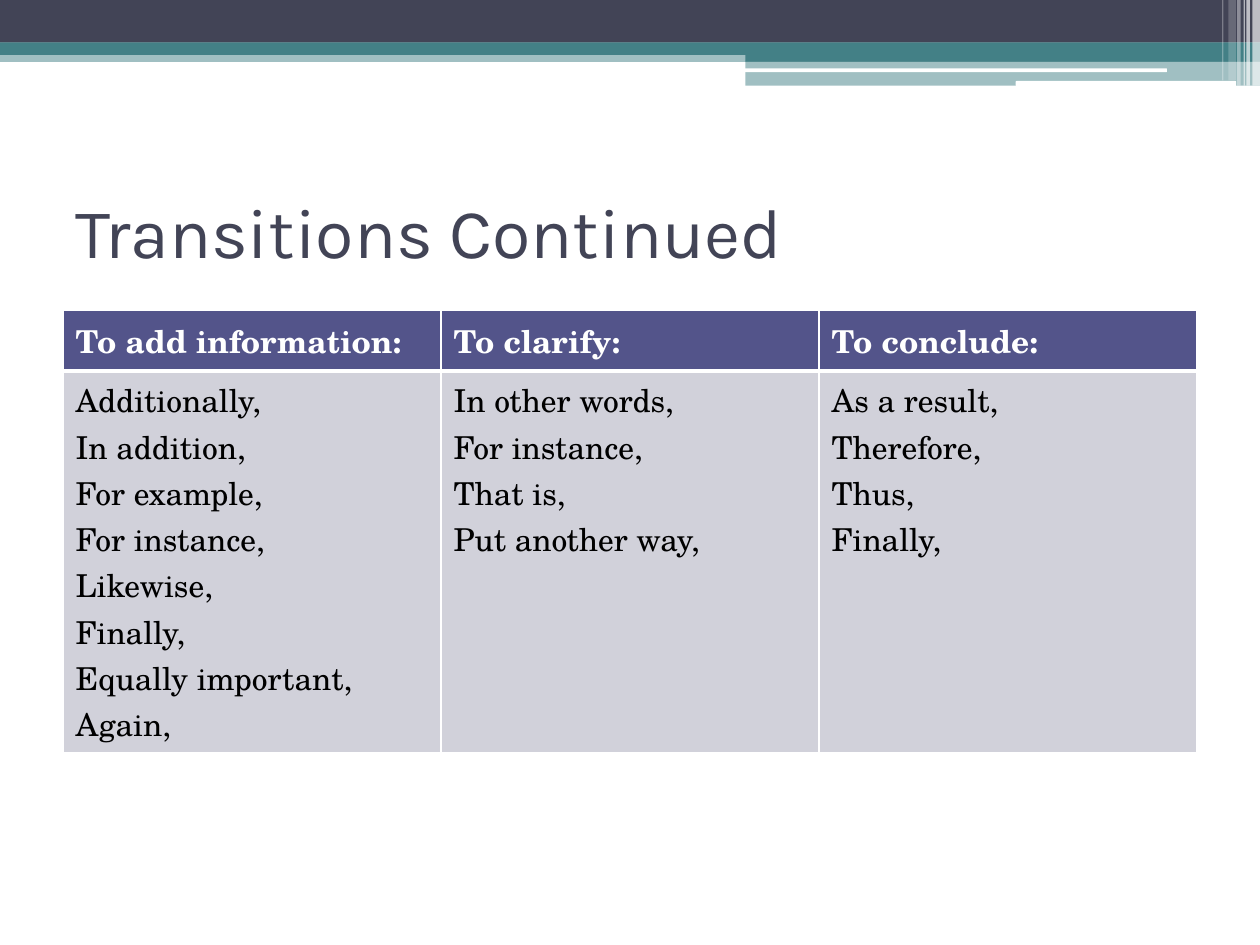
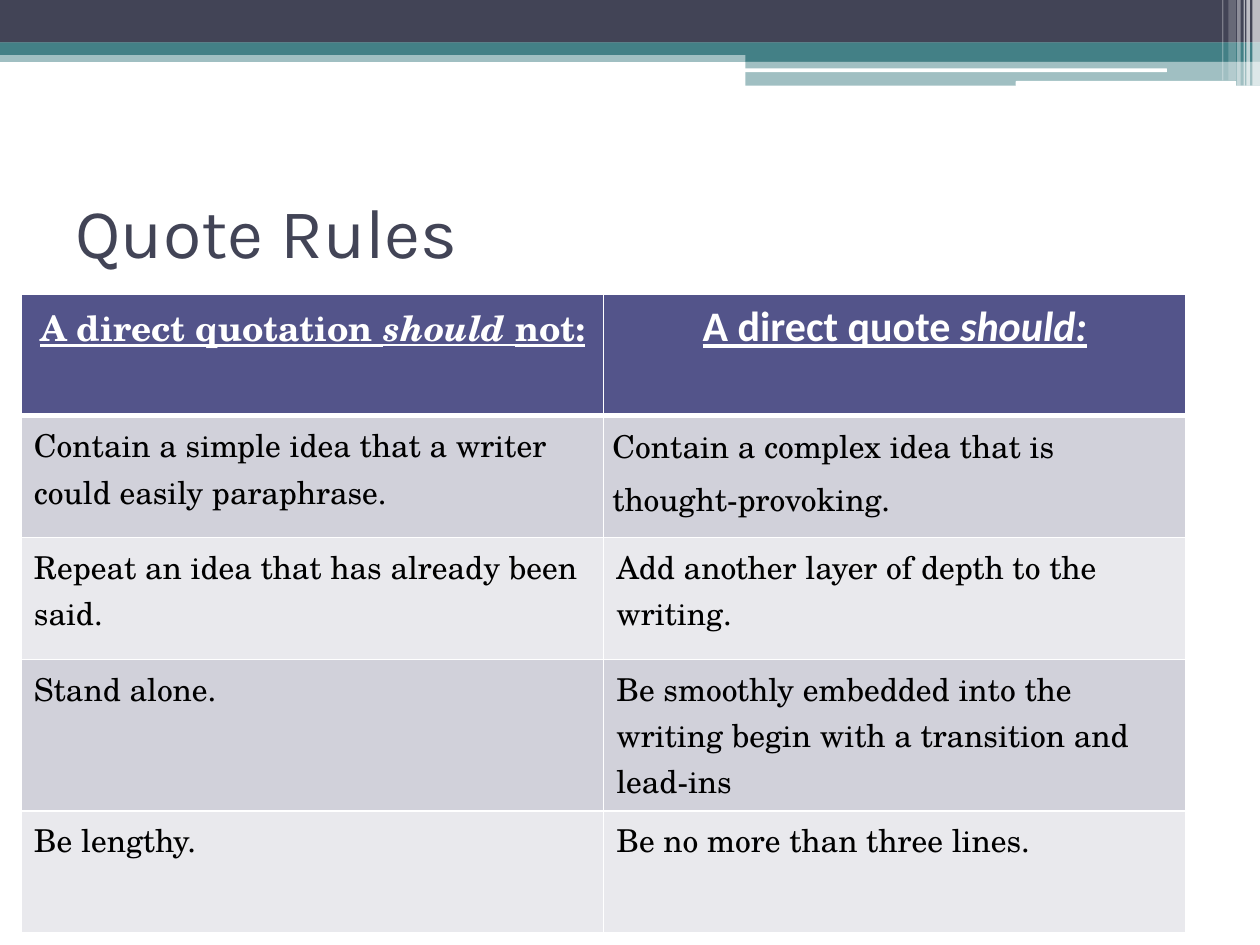
from lxml.etree import SubElement as Sub
from pptx import Presentation
from pptx.dml.color import RGBColor as Rgb
from pptx.enum.shapes import MSO_SHAPE as Form
from pptx.enum.text import MSO_ANCHOR as Anchor, PP_ALIGN as Align
from pptx.oxml.ns import qn
from pptx.util import Pt


class Theme:
    dark = "424456"
    teal = "438086"
    white = "FFFFFF"
    black = "000000"
    head = "53548A"
    bands = ("D1D1DA", "E9E9ED")
    title = ("Karla", 40)
    body = ("TeX Gyre Schola", 18)
    rule = ("TeX Gyre Schola", 20)
    quote = ("Calibri", 24)


def write(para, text, font, color, **flags):
    run = para.add_run()
    run.text = text
    run.font.name, size = font
    run.font.size = Pt(size)
    run.font.color.rgb = Rgb.from_string(color)
    for name, value in flags.items():
        setattr(run.font, name, value)


def grid(slide, left, top, wide, highs, cols):
    frame = slide.shapes.add_table(
        len(highs), cols, Pt(left), Pt(top), Pt(wide), Pt(sum(highs)))
    table = frame.table
    for r, high in enumerate(highs):
        table.rows[r].height = Pt(high)
        for cell in table.rows[r].cells:
            # White borders, with a heavy rule under the header
            props = cell._tc.get_or_add_tcPr()
            for side in "LRTB":
                heavy = (r, side) in ((0, "B"), (1, "T"))
                line = Sub(props, qn("a:ln" + side), w=str(Pt(3 if heavy else 1)))
                Sub(Sub(line, qn("a:solidFill")), qn("a:srgbClr"), val=Theme.white)
            cell.fill.solid()
            shade = Theme.bands[(r - 1) % 2] if r else Theme.head
            cell.fill.fore_color.rgb = Rgb.from_string(shade)
    return table


# Bands along the top: left, top, width, height, colour, opacity, form
rect, pill = Form.RECTANGLE, Form.ROUNDED_RECTANGLE
bands = [
    (0, 28.8, 720, 6.6, Theme.teal, 50, rect),
    (0, 0, 720, 24.4, Theme.dark, 100, rect),
    (0, 24.2, 720, 7.2, Theme.teal, 100, rect),
    (426, 28.3, 294, 7, Theme.teal, 100, rect),
    (426, 34.7, 294, 14.2, Theme.teal, 50, rect),
    (425.6, 39.1, 241.2, 2.2, Theme.white, 100, pill),
    (580.4, 46.3, 126, 2.9, Theme.white, 100, pill),
]
# Thin upright stripes at the right edge: left, width, height, opacity
stripes = [
    (715.7, 4.3, 49, 65), (712.2, 2, 49, 65), (710.7, 0.7, 49, 60),
    (707, 2, 49, 40), (702, 4.3, 46, 20), (698.4, 0.7, 46, 30),
]
bands += [(x, 0, w, h, Theme.white, pct, rect) for x, w, h, pct in stripes]

deck = Presentation()
deck.slide_width, deck.slide_height = Pt(720), Pt(540)

# Shared bands and titles
slides = []
for title in ("Transitions Continued", "Quote Rules"):
    slide = deck.slides.add_slide(deck.slide_layouts[6])
    slides.append(slide)
    for x, y, w, h, color, pct, form in bands:
        band = slide.shapes.add_shape(form, Pt(x), Pt(y), Pt(w), Pt(h))
        band.shadow.inherit = False
        band.line.fill.background()
        band.fill.solid()
        band.fill.fore_color.rgb = Rgb.from_string(color)
        if pct < 100:
            tint = band.fill._xPr.find(qn("a:solidFill"))[0]
            Sub(tint, qn("a:alpha"), val=str(pct * 1000))
    frame = slide.shapes.add_textbox(Pt(36), Pt(90), Pt(648), Pt(84)).text_frame
    frame.word_wrap = True
    frame.vertical_anchor = Anchor.MIDDLE
    write(frame.paragraphs[0], title, Theme.title, Theme.dark)

# Slide 1: transition words by purpose
groups = {
    "To add information:": [
        "Additionally,", "In addition,", "For example,", "For instance,",
        "Likewise,", "Finally,", "Equally important,", "Again,",
    ],
    "To clarify:": ["In other words,", "For instance,", "That is,", "Put another way,"],
    "To conclude:": ["As a result,", "Therefore,", "Thus,", "Finally,"],
}
table = grid(slides[0], 36, 177.4, 648, [34.6, 218.4], len(groups))
for c, (head, words) in enumerate(groups.items()):
    para = table.cell(0, c).text_frame.paragraphs[0]
    write(para, head, Theme.body, Theme.white, bold=True)
    frame = table.cell(1, c).text_frame
    for n, word in enumerate(words):
        para = frame.add_paragraph() if n else frame.paragraphs[0]
        write(para, word, Theme.body, Theme.black, bold=False)

# Slide 2: what a quotation should and should not do
heads = [
    (Theme.rule, [("A direct quotation ", False), ("should ", True), ("not:", False)]),
    (Theme.quote, [("A direct quote ", False), ("should:", True)]),
]
rules = [
    ("Contain a simple idea that a writer could easily paraphrase.",
     "Contain a complex idea that is thought-provoking."),
    ("Repeat an idea that has already been said.",
     "Add another layer of depth to the writing."),
    ("Stand alone.",
     "Be smoothly embedded into the writing begin with a transition and lead-ins"),
    ("Be lengthy.", "Be no more than three lines."),
]
highs = [69.6] * (len(rules) + 1)
highs[3] = 86.6  # three lines of text
table = grid(slides[1], 12.2, 168, 665.6, highs, 2)
for c, (font, parts) in enumerate(heads):
    para = table.cell(0, c).text_frame.paragraphs[0]
    para.alignment = Align.CENTER
    for text, slant in parts:
        write(para, text, font, Theme.white, bold=True, italic=slant, underline=True)
for r, pair in enumerate(rules, 1):
    for c, text in enumerate(pair):
        para = table.cell(r, c).text_frame.paragraphs[0]
        write(para, text, Theme.body, Theme.black, bold=False)

# Looser lines and tight margins in the top two cells on the right
for r in range(2):
    cell = table.cell(r, 1)
    cell.margin_left = cell.margin_right = Pt(5)
    cell.margin_top = cell.margin_bottom = 0
    para = cell.text_frame.paragraphs[0]
    para.line_spacing = 1.15
    para.space_before = Pt(12)

deck.save("out.pptx")
